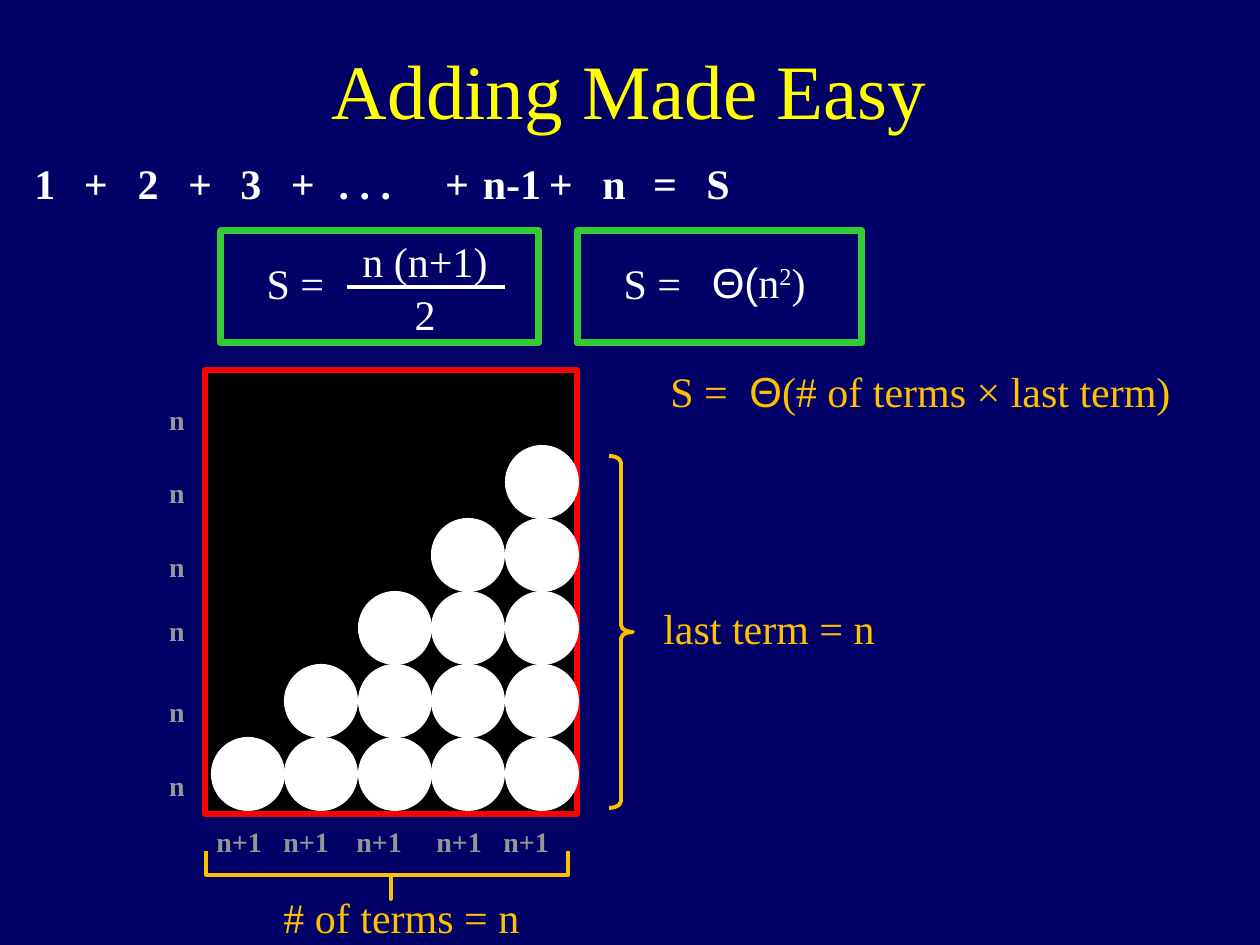
from dataclasses import dataclass, field

from lxml import etree
from pptx import Presentation
from pptx.dml.color import RGBColor
from pptx.enum.shapes import MSO_CONNECTOR, MSO_SHAPE
from pptx.enum.text import MSO_ANCHOR, MSO_AUTO_SIZE, PP_ALIGN
from pptx.oxml.ns import qn
from pptx.util import Emu, Pt

LEFT, CENTER, RIGHT = PP_ALIGN.LEFT, PP_ALIGN.CENTER, PP_ALIGN.RIGHT
TOP, MIDDLE = MSO_ANCHOR.TOP, MSO_ANCHOR.MIDDLE
GROW, FIXED = MSO_AUTO_SIZE.SHAPE_TO_FIT_TEXT, MSO_AUTO_SIZE.NONE
RECT, OVAL = MSO_SHAPE.RECTANGLE, MSO_SHAPE.OVAL
LEFT_BRACE, RIGHT_BRACE = MSO_SHAPE.LEFT_BRACE, MSO_SHAPE.RIGHT_BRACE
STRAIGHT = MSO_CONNECTOR.STRAIGHT

EMU_PER_PX = 914400 / 126
COLORS = {
    "navy": "000066", "white": "FFFFFF", "yellow": "FFFF00", "green": "33CC33",
    "black": "000000", "red": "FF0000", "gray": "969696", "amber": "FFC000",
}
SERIF, SANS = "Times New Roman", "Arial"
Box = tuple[int, int, int, int]


@dataclass
class Run:
    text: str
    font: str = SERIF
    superscript: bool = False


@dataclass
class Label:
    runs: list[Run]
    box: Box
    color: str = "white"
    size: int = 24
    bold: bool = False
    align: PP_ALIGN = LEFT
    frame: dict = field(default_factory=dict)
    line_spacing: float = 1.0
    tabs: tuple[int, ...] = ()


@dataclass
class Figure:
    kind: MSO_SHAPE
    box: Box
    fill: str | None = None
    line: str | None = None
    width: float = 1
    rotation: int = 0
    adjustments: tuple[float, ...] = ()


def px(n: int) -> Emu:
    return Emu(round(n * EMU_PER_PX))


def rgb(name: str) -> RGBColor:
    return RGBColor.from_string(COLORS[name])


def set_all(target, values: dict) -> None:
    for name, value in values.items():
        setattr(target, name, value)


def add_label(slide, label: Label) -> None:
    tf = slide.shapes.add_textbox(*map(px, label.box)).text_frame
    set_all(tf, {"word_wrap": True, "auto_size": GROW,
                 "vertical_anchor": TOP} | label.frame)
    p = tf.paragraphs[0]
    set_all(p, {"alignment": label.align, "line_spacing": label.line_spacing})
    if label.tabs:
        stops = etree.SubElement(p._p.get_or_add_pPr(), qn("a:tabLst"))
        for stop in label.tabs:
            etree.SubElement(stops, qn("a:tab"), pos=str(px(stop)), algn="l")
    for run in label.runs:
        r = p.add_run()
        r.text = run.text
        set_all(r.font, {"name": run.font, "size": Pt(label.size), "bold": label.bold})
        r.font.color.rgb = rgb(label.color)
        if run.superscript:
            r._r.get_or_add_rPr().set("baseline", "30000")


def add_figure(slide, figure: Figure) -> None:
    sp = slide.shapes.add_shape(figure.kind, *map(px, figure.box))
    sp.shadow.inherit = False
    sp.rotation = figure.rotation
    for i, value in enumerate(figure.adjustments):
        sp.adjustments[i] = value
    if figure.fill:
        sp.fill.solid()
        sp.fill.fore_color.rgb = rgb(figure.fill)
    else:
        sp.fill.background()
    if figure.line:
        sp.line.color.rgb = rgb(figure.line)
        sp.line.width = Pt(figure.width)
    else:
        sp.line.fill.background()


def add_fraction_bar(slide, x1: int, x2: int, y: int) -> None:
    bar = slide.shapes.add_connector(STRAIGHT, px(x1), px(y), px(x2), px(y))
    bar.line.color.rgb = rgb("white")
    bar.line.width = Pt(2)
    etree.SubElement(bar._element.spPr, qn("a:effectLst"))


NO_WRAP = {"word_wrap": False}
TIGHT = NO_WRAP | dict.fromkeys(
    ("margin_left", "margin_top", "margin_right", "margin_bottom"), 0)
CENTERED = {"vertical_anchor": MIDDLE}

TITLE = Label([Run("Adding Made Easy")], (94, 10, 1071, 158), "yellow", 44,
              align=CENTER, frame=CENTERED | {"auto_size": FIXED})

# Each term of the sum with its centre
SUM_TERMS = [("1", 45), ("+", 96), ("2", 148), ("+", 200), ("3", 251), ("+", 303),
             (". . .", 365), ("+", 457), ("n-1", 512), ("+", 561), ("n", 614),
             ("=", 665), ("S", 718)]
TERM_WIDTH = 60

FORMULAS = [
    Label([Run("S = ")], (242, 251, 105, 64), align=RIGHT),
    Label([Run("n (n+1)")], (349, 229, 151, 64), align=RIGHT, frame=NO_WRAP),
    Label([Run("2")], (402, 282, 46, 64), align=RIGHT, frame=NO_WRAP),
    Label([Run("S = ")], (599, 251, 105, 64), align=RIGHT),
    Label([Run("Θ(", SANS), Run("n"), Run("2", superscript=True), Run(")")],
          (697, 250, 121, 64), align=RIGHT, frame=NO_WRAP),
]
FORMULA_FRAMES = [Figure(RECT, (x, 231, w, 112), line="green", width=4)
                  for x, w in ((221, 318), (577, 285))]

TRIANGLE_SIZE = 5
CIRCLE = 74
FIRST_X, LAST_X = 211, 505
BOTTOM_Y, ROW_STEP = 737, 73
GRID = Figure(RECT, (205, 370, 372, 444), "black", "red", 3)
ROW_LABEL_TOPS = (362, 435, 509, 573, 654, 728)
COLUMN_LABELS = Label([Run("\t".join(["n+1"] * TRIANGLE_SIZE))], (204, 818, 359, 47),
                      "gray", 16, True, frame=CENTERED | NO_WRAP,
                      tabs=(67, 140, 220, 287))

NOTES = [
    Label([Run("S =\t"), Run("Θ", SANS), Run("(# of terms × last term)")],
          (658, 359, 592, 63), "amber", tabs=(79,)),
    Label([Run("# of terms = n")], (271, 885, 296, 63), "amber"),
    Label([Run("last term = n")], (651, 596, 265, 63), "amber"),
]
BRACES = [
    Figure(LEFT_BRACE, (363, 694, 48, 362), line="amber", width=2.25,
           rotation=270, adjustments=(0, 0.51)),
    Figure(RIGHT_BRACE, (609, 456, 24, 352), line="amber", width=2.25,
           adjustments=(0.28, 0.5)),
]


def add_triangle(slide) -> None:
    """Stack one more circle in each column than in the one before."""
    for col in range(TRIANGLE_SIZE):
        x = FIRST_X + (LAST_X - FIRST_X) * col // (TRIANGLE_SIZE - 1)
        for row in range(col + 1):
            y = BOTTOM_Y - row * ROW_STEP
            add_figure(slide, Figure(OVAL, (x, y, CIRCLE, CIRCLE), "white"))


def main() -> None:
    prs = Presentation()
    prs.slide_width, prs.slide_height = px(1260), px(945)
    slide = prs.slides.add_slide(prs.slide_layouts[6])
    slide.background.fill.solid()
    slide.background.fill.fore_color.rgb = rgb("navy")

    terms = [Label([Run(text)], (x - TERM_WIDTH // 2, 158, TERM_WIDTH, 50), bold=True,
                   align=CENTER, frame=TIGHT) for text, x in SUM_TERMS]
    row_labels = [Label([Run("n")], (155, y, 42, 81), "gray", 16, True, RIGHT,
                        CENTERED, line_spacing=2.0) for y in ROW_LABEL_TOPS]

    for figure in [*FORMULA_FRAMES, GRID, *BRACES]:
        add_figure(slide, figure)
    add_triangle(slide)
    add_fraction_bar(slide, 347, 505, 287)
    for label in [TITLE, *terms, *FORMULAS, COLUMN_LABELS, *row_labels, *NOTES]:
        add_label(slide, label)
    prs.save("out.pptx")


if __name__ == "__main__":
    main()
